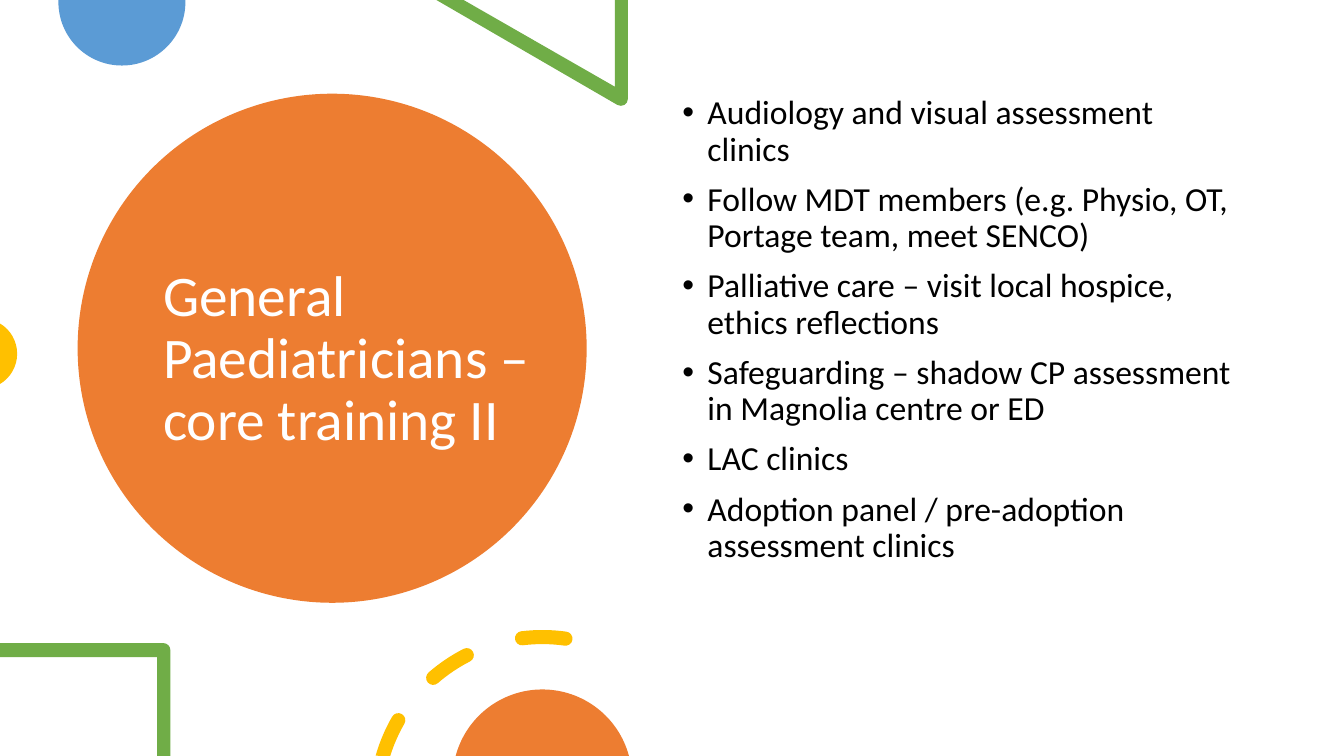
from dataclasses import dataclass
from math import cos, radians, sin, tan

from lxml.etree import SubElement
from pptx import Presentation
from pptx.dml.color import RGBColor
from pptx.enum.shapes import MSO_SHAPE as Preset
from pptx.enum.text import MSO_ANCHOR as Anchor
from pptx.oxml.ns import qn
from pptx.util import Emu, Pt

PX = 9144  # EMU in one px, 100 px to the inch
SLIDE_WIDTH = Emu(12192000)
HEIGHT = 750
INDENT = 25
BAND = 7  # half the width of a ring dash, and the radius of rounded corners

ORANGE = RGBColor(0xED, 0x7D, 0x31)
BLUE = RGBColor(0x5B, 0x9B, 0xD5)
GREEN = RGBColor(0x70, 0xAD, 0x47)
YELLOW = RGBColor(0xFF, 0xC0, 0x00)
WHITE = RGBColor(0xFF, 0xFF, 0xFF)
BLACK = RGBColor(0x00, 0x00, 0x00)

Point = tuple[float, float]


@dataclass
class Vertex:
    """A corner, reached by a straight line or by a curve with two handles."""
    x: float
    y: float
    handles: tuple[Point, ...] = ()


Contour = list[Vertex]


@dataclass
class Ornament:
    color: RGBColor
    contours: list[Contour]


@dataclass
class TextBlock:
    left: int
    top: int
    width: int
    height: int
    lines: list[str]
    size: int
    color: RGBColor
    anchor: Anchor
    bulleted: bool = False


def corners(*points: Point) -> Contour:
    return [Vertex(x, y) for x, y in points]


def arc(center: Point, radius: float, start: float, end: float, pieces: int = 1) -> Contour:
    """Circle arc in equal curved pieces; degrees grow clockwise from the right."""
    step = radians(end - start) / pieces
    reach = 4 / 3 * tan(step / 4)

    def at(angle: float, pull: float = 0) -> Point:
        return (center[0] + radius * (cos(angle) - pull * sin(angle)),
                center[1] + radius * (sin(angle) + pull * cos(angle)))

    angles = [radians(start) + step * i for i in range(pieces + 1)]
    curves = [Vertex(*at(b), (at(a, reach), at(b, -reach)))
              for a, b in zip(angles, angles[1:])]
    return [Vertex(*at(angles[0])), *curves]


def ring_dash(start: float, end: float, cut: bool = False) -> Contour:
    """A dash of the yellow ring; a cut one ends flat at the slide's bottom edge."""
    center, radius = (538, 797), 165

    def cap(angle: float, turn: float) -> Contour:
        middle = arc(center, radius, angle, angle)[0]
        return arc((middle.x, middle.y), BAND, turn, turn + 180, 2)[1:]

    outer = arc(center, radius + BAND, start, end, 2)
    inner = arc(center, radius - BAND, end, start + (1 if cut else 0))[1:]
    tail = [] if cut else cap(start, start + 180)
    return outer + cap(end, end) + inner + tail


PARTS: list[Ornament | TextBlock] = [
    TextBlock(152, 135, 414, 445, ["General Paediatricians – core training II"],
              41, WHITE, Anchor.MIDDLE),
    Ornament(BLUE, [corners((184, 0), (58, 0)) + arc((121, 2), 63, 180, 0, 2)]),
    Ornament(GREEN, [corners((623, 0), (610, 0), (610, 86), (460, 0), (433, 0))
                     + arc((616, 98), BAND, 120, 0)]),
    Ornament(YELLOW, [arc((-18, 351), 35, -59, 59, 2)]),
    TextBlock(667, 90, 575, 535, [
        "Audiology and visual assessment clinics",
        "Follow MDT members (e.g. Physio, OT, Portage team, meet SENCO)",
        "Palliative care – visit local hospice, ethics reflections",
        "Safeguarding – shadow CP assessment in Magnolia centre or ED",
        "LAC clinics",
        "Adoption panel / pre-adoption assessment clinics",
    ], 24, BLACK, Anchor.TOP, bulleted=True),
    Ornament(GREEN, [corners((0, 652), (0, 638)) + arc((162, 645), BAND, -90, 0)
                     + corners((169, HEIGHT), (156, HEIGHT), (156, 652))]),
    Ornament(YELLOW, [ring_dash(196, 210, cut=True), ring_dash(229, 243),
                      ring_dash(263, 278)]),
    Ornament(ORANGE, [arc((538, 773), 89, 195, 345, 2)]),
]


def paint(shape, color: RGBColor) -> None:
    shape.shadow.inherit = False
    shape.fill.solid()
    shape.fill.fore_color.rgb = color
    shape.line.fill.background()


def bend(shape, contours: list[Contour]) -> None:
    """Turn the straight segments whose vertices have handles into curves."""
    vertices = [vertex for contour in contours for vertex in contour[1:]]
    segments = list(shape._element.iter(qn("a:lnTo")))
    for segment, vertex in zip(segments, vertices):
        if vertex.handles:
            segment.tag = qn("a:cubicBezTo")
            for index, (x, y) in enumerate(vertex.handles):
                handle = SubElement(segment, qn("a:pt"), x=str(round(x * PX - shape.left)),
                                    y=str(round(y * PX - shape.top)))
                segment.insert(index, handle)


def draw_ornament(page, ornament: Ornament) -> None:
    outlines = [[(v.x * PX, v.y * PX) for v in contour] for contour in ornament.contours]
    builder = page.shapes.build_freeform(*outlines[0][0], scale=1.0)
    for index, outline in enumerate(outlines):
        if index:
            builder.move_to(*outline[0])
        builder.add_line_segments(outline[1:], close=True)
    shape = builder.convert_to_shape()
    bend(shape, ornament.contours)
    paint(shape, ornament.color)


def add_bullet(para) -> None:
    properties = para._p.get_or_add_pPr()
    properties.set("marL", str(INDENT * PX))
    properties.set("indent", str(-INDENT * PX))
    SubElement(properties, qn("a:buFont"), typeface="Arial")
    SubElement(properties, qn("a:buChar"), char="•")


def draw_text(page, block: TextBlock) -> None:
    bounds = (block.left, block.top, block.width, block.height)
    box = page.shapes.add_textbox(*(side * PX for side in bounds))
    frame = box.text_frame
    frame.word_wrap = True
    frame.vertical_anchor = block.anchor
    for index, line in enumerate(block.lines):
        para = frame.add_paragraph() if index else frame.paragraphs[0]
        para.line_spacing = 0.9
        if block.bulleted:
            para.space_before = Pt(10)
            add_bullet(para)
        span = para.add_run()
        span.text = line
        span.font.color.rgb = block.color
        for name, value in {"name": "Calibri", "size": Pt(block.size)}.items():
            setattr(span.font, name, value)


def main() -> None:
    deck = Presentation()
    deck.slide_width, deck.slide_height = SLIDE_WIDTH, HEIGHT * PX
    page = deck.slides.add_slide(deck.slide_layouts[6])
    disc = page.shapes.add_shape(Preset.OVAL, 77 * PX, 93 * PX, 505 * PX, 505 * PX)
    paint(disc, ORANGE)
    for part in PARTS:
        if isinstance(part, Ornament):
            draw_ornament(page, part)
        else:
            draw_text(page, part)
    deck.save("out.pptx")


if __name__ == "__main__":
    main()
